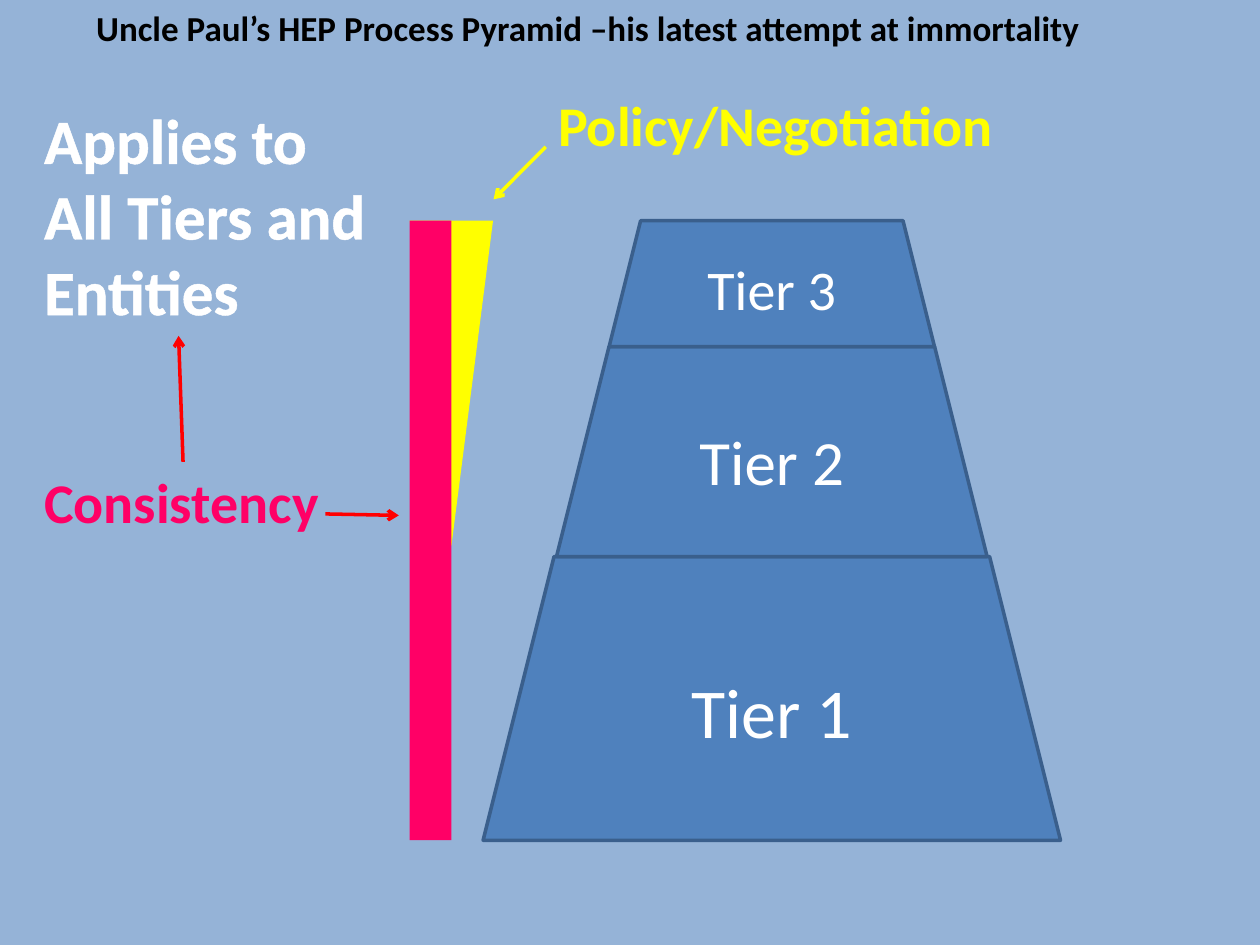
from lxml.etree import SubElement
from pptx import Presentation
from pptx.dml.color import RGBColor
from pptx.enum.shapes import MSO_CONNECTOR as Connector, MSO_SHAPE as Shape
from pptx.enum.text import MSO_ANCHOR as Anchor, MSO_AUTO_SIZE as AutoSize, PP_ALIGN as Align
from pptx.oxml import parse_xml
from pptx.oxml.ns import nsdecls, qn
from pptx.util import Cm, Pt

BLUE, EDGE, YELLOW, PINK, RED = "4F81BD", "3A5F8C", "FFFF00", "FF0066", "FF0000"
WHITE, BLACK, BACKGROUND = "FFFFFF", "000000", "95B3D7"
CENTER, TOP, BOTTOM = 15.56, 4.45, 16.94
BAR_LEFT, BAR_WIDTH = 8.26, 0.84


def color(hex_value):
    """Turn a hex string into a colour."""
    return RGBColor.from_string(hex_value)


def add_run(para, text, size, ink, bold=False):
    """Add one run of Calibri text to a paragraph."""
    span = para.add_run()
    span.text = text
    font = span.font
    font.name, font.size, font.bold = "Calibri", Pt(size), bold
    font.color.rgb = color(ink)
    return span


def add_block(page, kind, left, top, width, height, fill, edge=None):
    """Add a filled shape, with an edge if a colour is given."""
    block = page.shapes.add_shape(kind, Cm(left), Cm(top), Cm(width), Cm(height))
    block.shadow.inherit = False
    block.fill.solid()
    block.fill.fore_color.rgb = color(fill)
    if edge:
        block.line.color.rgb = color(edge)
        block.line.width = Pt(2)
    else:
        block.line.fill.background()
    return block


def add_tier(page, name, size, top, width, height):
    """Add one centred, labelled tier of the pyramid."""
    tier = add_block(page, Shape.TRAPEZOID, CENTER - width / 2, top, width, height, BLUE, EDGE)
    frame = tier.text_frame
    frame.vertical_anchor = Anchor.MIDDLE
    para = frame.paragraphs[0]
    para.alignment = Align.CENTER
    add_run(para, name, size, WHITE)


def add_label(page, text, left, top, width, height, size, ink, wrap=False):
    """Add a bold text box and return its run."""
    box = page.shapes.add_textbox(Cm(left), Cm(top), Cm(width), Cm(height))
    frame = box.text_frame
    frame.word_wrap = wrap
    frame.auto_size = AutoSize.SHAPE_TO_FIT_TEXT
    return add_run(frame.paragraphs[0], text, size, ink, True)


def outline_text(span, ink, width):
    """Give the letters of a run an outline."""
    outline = parse_xml(
        f'<a:ln {nsdecls("a")} w="{Pt(width)}"><a:solidFill>'
        f'<a:srgbClr val="{ink}"/></a:solidFill></a:ln>'
    )
    span.font._element.insert(0, outline)


def add_arrow(page, start, end, ink):
    """Add a straight line with an arrowhead at its end."""
    arrow = page.shapes.add_connector(Connector.STRAIGHT, *map(Cm, start + end))
    arrow.line.color.rgb = color(ink)
    arrow.line.width = Pt(2)
    SubElement(arrow.line._get_or_add_ln(), qn("a:tailEnd"), type="arrow")
    SubElement(arrow._element.spPr, qn("a:effectLst"))


def main():
    """Build the process pyramid slide."""
    deck = Presentation()
    deck.slide_width, deck.slide_height = Cm(25.4), Cm(19.05)
    page = deck.slides.add_slide(deck.slide_layouts[6])
    page.background.fill.solid()
    page.background.fill.fore_color.rgb = color(BACKGROUND)

    tier_top = BOTTOM
    for name, size, width, height in (
        ("Tier 1", 40, 11.64, 5.72),
        ("Tier 2", 36, 8.68, 4.23),
        ("Tier 3", 32, 6.56, 2.54),
    ):
        tier_top -= height
        add_tier(page, name, size, tier_top, width, height)

    add_block(page, Shape.FLOWCHART_MERGE, BAR_LEFT, TOP, 2 * BAR_WIDTH, 6.56, YELLOW)
    add_block(page, Shape.RECTANGLE, BAR_LEFT, TOP, BAR_WIDTH, BOTTOM - TOP, PINK)

    add_label(page, "Policy/Negotiation", 11, 1.7, 9.37, 1.63, 32, YELLOW)
    add_arrow(page, (11, 2.96), (9.95, 4.02), YELLOW)
    add_label(page, "Consistency", 0.64, 9.31, 6.1, 1.63, 32, PINK)
    add_arrow(page, (6.56, 10.36), (8.04, 10.39), RED)
    scope = add_label(page, "Applies to All Tiers and Entities", 0.64, 1.91, 7.2, 4.88, 36, WHITE, True)
    outline_text(scope, WHITE, 1.45)
    add_arrow(page, (3.69, 9.31), (3.6, 6.77), RED)
    add_label(page, "Uncle Paul’s HEP Process Pyramid –his latest attempt at immortality",
              1.69, 0, 22.65, 1.11, 20, BLACK, True)

    deck.save("out.pptx")


if __name__ == "__main__":
    main()
